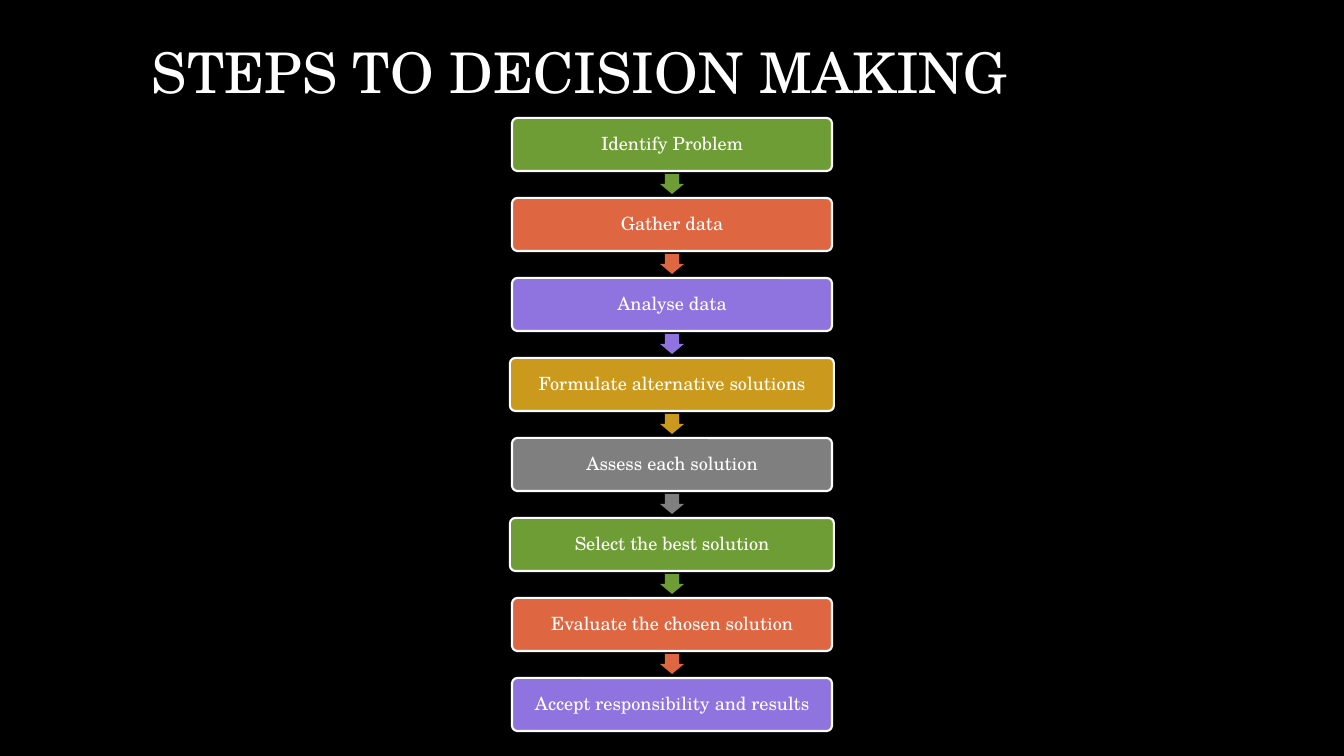
from dataclasses import dataclass

from pptx import Presentation
from pptx import util as u
from pptx.dml.color import RGBColor
from pptx.enum import shapes, text

EMU_PER_PX = 12192000 / 1344
PAGE_WIDTH, PAGE_HEIGHT = 1344, 756
CENTER = PAGE_WIDTH // 2
FIRST_TOP, PITCH = 118, 80
STEP_HEIGHT = 53
ARROW_LENGTH, ARROW_BREADTH, ARROW_CENTER = 20, 24, 66
FONT = "TeX Gyre Schola"
COLORS = {
    "black": "000000",
    "white": "FFFFFF",
    "green": "6E9D35",
    "orange": "DE6742",
    "purple": "8F73DF",
    "gold": "CB991B",
    "gray": "7F7F7F",
}


@dataclass(frozen=True)
class Step:
    label: str
    color: str
    width: int = 320


STEPS = [
    Step("Identify Problem", "green"),
    Step("Gather data", "orange"),
    Step("Analyse data", "purple"),
    Step("Formulate alternative solutions", "gold", 324),
    Step("Assess each solution", "gray"),
    Step("Select the best solution", "green", 324),
    Step("Evaluate the chosen solution", "orange"),
    Step("Accept responsibility and results", "purple"),
]


def px(length: int) -> u.Emu:
    return u.Emu(round(length * EMU_PER_PX))


def rgb(name: str) -> RGBColor:
    return RGBColor.from_string(COLORS[name])


def apply(target, values: dict) -> None:
    for name, value in values.items():
        setattr(target, name, value)


def write(box, content: str, size: int, frame_format: dict, para_format: dict) -> None:
    frame = box.text_frame
    apply(frame, {"word_wrap": True, **frame_format})
    para = frame.paragraphs[0]
    apply(para, para_format)
    span = para.add_run()
    span.text = content
    apply(span.font, {"name": FONT, "size": u.Pt(size)})
    span.font.color.rgb = rgb("white")


def add_filled(page, kind, left: int, top: int, width: int, height: int,
               color: str, adjustments: list[float]):
    box = page.shapes.add_shape(kind, px(left), px(top), px(width), px(height))
    box.shadow.inherit = False
    box.fill.solid()
    box.fill.fore_color.rgb = rgb(color)
    for index, value in enumerate(adjustments):
        box.adjustments[index] = value
    return box


def add_title(page) -> None:
    box = page.shapes.add_textbox(px(142), px(33), px(1058), px(76))
    write(box, "STEPS TO DECISION MAKING", 40,
          {"vertical_anchor": text.MSO_ANCHOR.BOTTOM},
          {"line_spacing": 0.8})


def add_step(page, step: Step, top: int) -> None:
    box = add_filled(page, shapes.MSO_SHAPE.ROUNDED_RECTANGLE,
                     CENTER - step.width // 2, top, step.width, STEP_HEIGHT,
                     step.color, [0.1])
    box.line.color.rgb = rgb("white")
    box.line.width = u.Pt(1.5)
    margins = ("margin_left", "margin_top", "margin_right", "margin_bottom")
    write(box, step.label, 13,
          {"vertical_anchor": text.MSO_ANCHOR.MIDDLE, **dict.fromkeys(margins, px(5))},
          {"alignment": text.PP_ALIGN.CENTER, "line_spacing": 0.9})


def add_arrow(page, step: Step, top: int) -> None:
    arrow = add_filled(page, shapes.MSO_SHAPE.RIGHT_ARROW,
                       CENTER - ARROW_LENGTH // 2,
                       top + ARROW_CENTER - ARROW_BREADTH // 2,
                       ARROW_LENGTH, ARROW_BREADTH, step.color, [0.6, 0.5])
    arrow.rotation = 90
    arrow.line.fill.background()


def main() -> None:
    deck = Presentation()
    apply(deck, {"slide_width": px(PAGE_WIDTH), "slide_height": px(PAGE_HEIGHT)})
    page = deck.slides.add_slide(deck.slide_layouts[6])
    page.background.fill.solid()
    page.background.fill.fore_color.rgb = rgb("black")
    add_title(page)
    for index, step in enumerate(STEPS):
        top = FIRST_TOP + index * PITCH
        add_step(page, step, top)
        if index < len(STEPS) - 1:
            add_arrow(page, step, top)
    deck.save("out.pptx")


if __name__ == "__main__":
    main()
